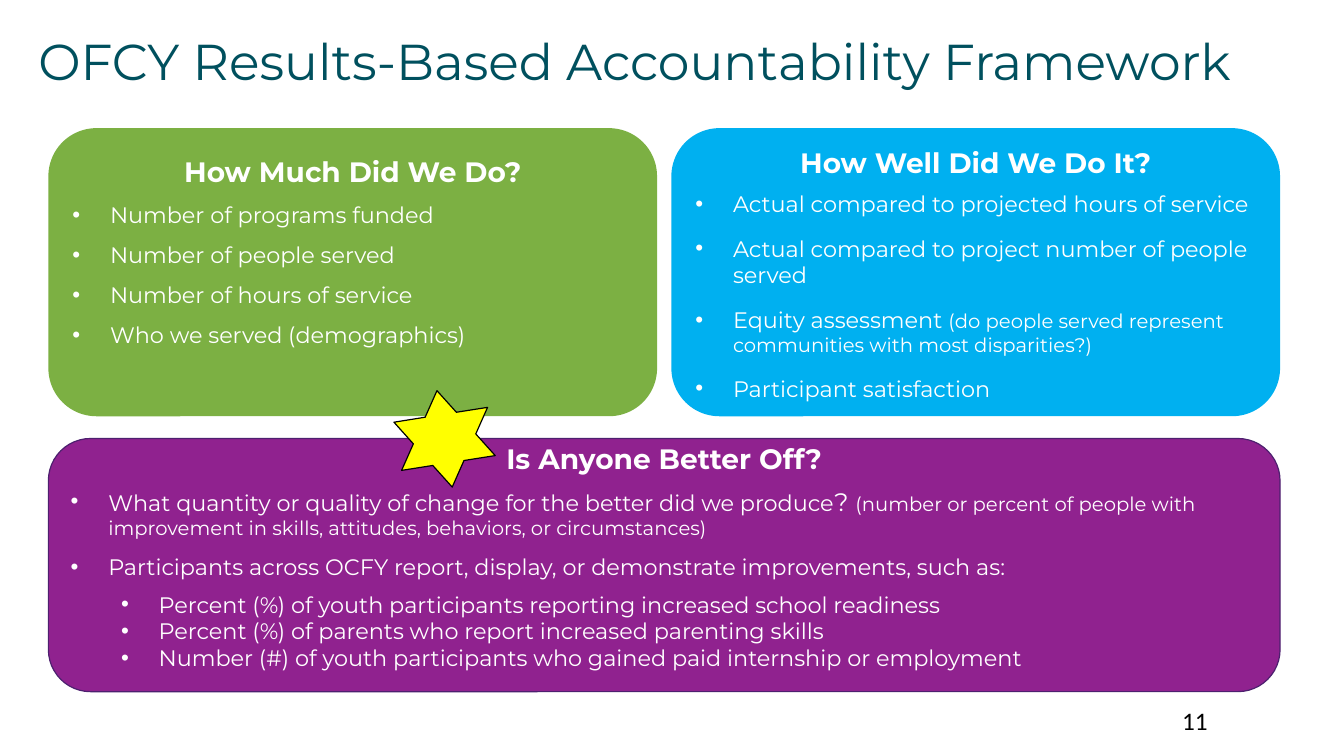
"""Build the Results-Based Accountability framework slide."""
from lxml.etree import SubElement
from pptx import Presentation
from pptx.dml.color import RGBColor
from pptx.enum.shapes import MSO_SHAPE
from pptx.enum.text import MSO_ANCHOR, MSO_AUTO_SIZE, PP_ALIGN
from pptx.oxml.ns import qn
from pptx.util import Cm, Pt

COLORS = {
    "teal": "00505E", "green": "7CB043", "blue": "00B0F0", "purple": "90228F",
    "outline": "4D206F", "yellow": "FFFF00", "black": "000000", "white": "FFFFFF",
}
LEFT, TOP, GAP = 1.22, 3.23, 0.36
CARD_WIDTH, CARD_HEIGHT = 15.34, 7.26
FULL_WIDTH = 2 * CARD_WIDTH + GAP
INDENTS = [0.95, 2.22]


def add_text(paragraph, text, size, color, bold=False, font_name="Montserrat"):
    run = paragraph.add_run()
    run.text = text
    run.font.name = font_name
    run.font.size = Pt(size)
    run.font.bold = bold
    run.font.color.rgb = RGBColor.from_string(COLORS[color])


def add_filled_shape(kind, left, top, width, height, fill, line=None):
    shape = slide.shapes.add_shape(kind, Cm(left), Cm(top), Cm(width), Cm(height))
    shape.shadow.inherit = False
    shape.fill.solid()
    shape.fill.fore_color.rgb = RGBColor.from_string(COLORS[fill])
    if line:
        shape.line.color.rgb = RGBColor.from_string(COLORS[line])
        shape.line.width = Pt(0.85)
    else:
        shape.line.fill.background()
    return shape


presentation = Presentation()
presentation.slide_width = Cm(33.87)
presentation.slide_height = Cm(19.05)
slide = presentation.slides.add_slide(presentation.slide_layouts[5])

title = slide.shapes.title
title.left, title.top, title.width, title.height = Cm(0.71), Cm(0.64), Cm(33.17), Cm(3.05)
title.text_frame.auto_size = MSO_AUTO_SIZE.NONE
title.text_frame.vertical_anchor = MSO_ANCHOR.TOP
title.text_frame.paragraphs[0].alignment = PP_ALIGN.LEFT
add_text(title.text_frame.paragraphs[0], "OFCY Results-Based Accountability Framework", 36, "teal")

# Each bullet holds its level, space after in points, line spacing and sized text parts.
cards = [
    {
        "box": (LEFT, TOP, CARD_WIDTH, CARD_HEIGHT), "colors": ("green",),
        "insets": (0.13, 1.24), "heading": "How Much Did We Do?",
        "bullets": [
            (0, 8, 1.07, [("Number of programs funded", 16)]),
            (0, 8, 1.07, [("Number of people served", 16)]),
            (0, 8, 1.07, [("Number of hours of service", 16)]),
            (0, 8, 1.07, [("Who we served (demographics)", 16)]),
        ],
    },
    {
        "box": (LEFT + CARD_WIDTH + GAP, TOP, CARD_WIDTH, CARD_HEIGHT), "colors": ("blue",),
        "insets": (0.13, 0.13), "heading": "How Well Did We Do It?",
        "bullets": [
            (0, 12.8, 1.0, [("Actual compared to projected hours of service", 16)]),
            (0, 12.8, 1.0, [("Actual compared to project number of people served", 16)]),
            (0, 12.8, 1.0, [
                ("Equity assessment ", 16),
                ("(do people served represent communities with most disparities?)", 14),
            ]),
            (0, 0, 1.0, [("Participant satisfaction", 16)]),
        ],
    },
    {
        "box": (LEFT, 11.05, FULL_WIDTH, 6.38), "colors": ("purple", "outline"),
        "insets": (0, 0.5), "heading": "Is Anyone Better Off?",
        "bullets": [
            (0, 9.8, 1.0, [
                ("What quantity or quality of change for the better did we produce", 16),
                ("? ", 18),
                ("(number or percent of people with improvement in skills, attitudes, "
                 "behaviors, or circumstances)", 14),
            ]),
            (0, 7.3, 1.0, [("Participants across OCFY report, display, or demonstrate "
                            "improvements, such as:", 16)]),
            (1, 0, 1.0, [("Percent (%) of youth participants reporting increased "
                          "school readiness", 16)]),
            (1, 0, 1.0, [("Percent (%) of parents who report increased parenting skills", 16)]),
            (1, 0, 1.0, [("Number (#) of youth participants who gained paid internship "
                          "or employment", 16)]),
        ],
    },
]

for card in cards:
    shape = add_filled_shape(MSO_SHAPE.ROUNDED_RECTANGLE, *card["box"], *card["colors"])
    frame = shape.text_frame
    frame.word_wrap = True
    frame.vertical_anchor = MSO_ANCHOR.MIDDLE
    frame.margin_top, frame.margin_bottom = [Cm(inset) for inset in card["insets"]]

    heading = frame.paragraphs[0]
    heading.alignment = PP_ALIGN.CENTER
    heading.line_spacing = 1.07
    heading.space_after = Pt(8)
    add_text(heading, card["heading"], 20, "white", bold=True)

    for level, space_after, line_spacing, parts in card["bullets"]:
        paragraph = frame.add_paragraph()
        paragraph.alignment = PP_ALIGN.LEFT
        paragraph.level = level
        paragraph.line_spacing = line_spacing
        paragraph.space_after = Pt(space_after)
        properties = paragraph._p.get_or_add_pPr()
        properties.set("marL", str(Cm(INDENTS[level])))
        properties.set("indent", str(-Cm(INDENTS[0])))
        SubElement(properties, qn("a:buFont")).set("typeface", "Arial")
        SubElement(properties, qn("a:buChar")).set("char", "•")
        for text, size in parts:
            add_text(paragraph, text, size, "white")

page_number = slide.shapes.add_textbox(Cm(29.54), Cm(17.65), Cm(4.24), Cm(1.02))
page_number.text_frame.word_wrap = True
add_text(page_number.text_frame.paragraphs[0], "11", 18, "black", font_name="Calibri")

star = add_filled_shape(MSO_SHAPE.STAR_6_POINT, 10.01, 9.83, 2.39, 2.46, "yellow", "black")
star.rotation = 351

presentation.save("out.pptx")
